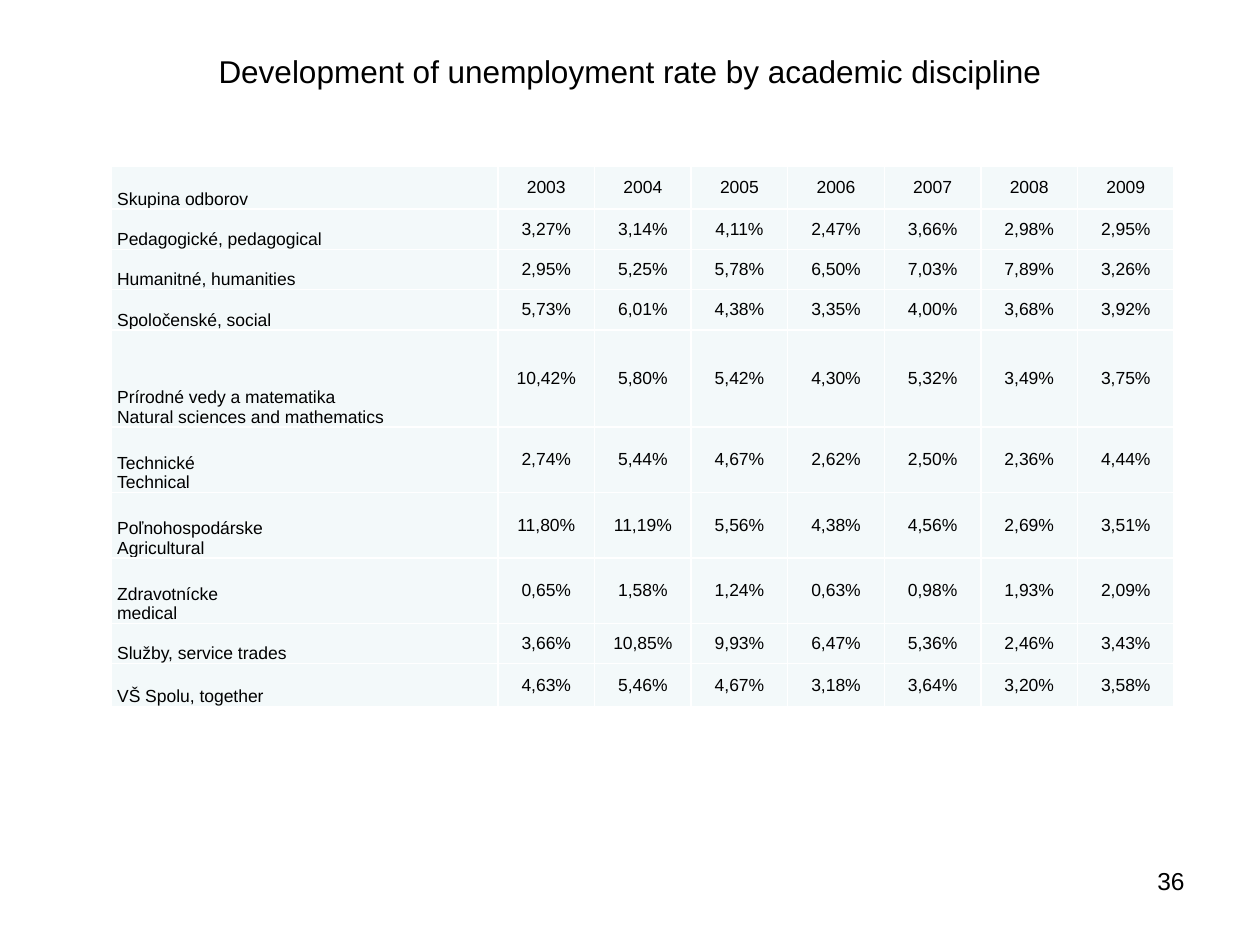
import pptx
import pptx.util
import pptx.dml.color
import pptx.enum.text
import pptx.oxml.ns
import lxml.etree

Inches, Pt = pptx.util.Inches, pptx.util.Pt
RGBColor = pptx.dml.color.RGBColor
ALIGN = pptx.enum.text.PP_ALIGN
ANCHOR = pptx.enum.text.MSO_ANCHOR
qn = pptx.oxml.ns.qn

W, H = 10, 7.5
FONT = "Arial"
BLACK = RGBColor(0x00, 0x00, 0x00)
WHITE = RGBColor(0xFF, 0xFF, 0xFF)
PALE = RGBColor(0xF3, 0xF9, 0xFA)

LABEL_SHARE = 0.364  # first column's share of the table width
ROW_HEIGHTS = [0.34, 0.32, 0.32, 0.32, 0.77, 0.52, 0.52, 0.52, 0.32, 0.34]
ROWS = [
    ("Skupina odborov", "2003 2004 2005 2006 2007 2008 2009"),
    ("Pedagogické, pedagogical", "3,27% 3,14% 4,11% 2,47% 3,66% 2,98% 2,95%"),
    ("Humanitné, humanities", "2,95% 5,25% 5,78% 6,50% 7,03% 7,89% 3,26%"),
    ("Spoločenské, social", "5,73% 6,01% 4,38% 3,35% 4,00% 3,68% 3,92%"),
    ("Prírodné vedy a matematika\nNatural sciences and mathematics",
     "10,42% 5,80% 5,42% 4,30% 5,32% 3,49% 3,75%"),
    ("Technické\nTechnical", "2,74% 5,44% 4,67% 2,62% 2,50% 2,36% 4,44%"),
    ("Poľnohospodárske\nAgricultural", "11,80% 11,19% 5,56% 4,38% 4,56% 2,69% 3,51%"),
    ("Zdravotnícke\nmedical", "0,65% 1,58% 1,24% 0,63% 0,98% 1,93% 2,09%"),
    ("Služby, service trades", "3,66% 10,85% 9,93% 6,47% 5,36% 2,46% 3,43%"),
    ("VŠ Spolu, together", "4,63% 5,46% 4,67% 3,18% 3,64% 3,20% 3,58%"),
]


def write(tf, text, size, align):
    """Fill a text frame with one paragraph per line of text."""
    for i, line in enumerate(text.split("\n")):
        p = tf.add_paragraph() if i else tf.paragraphs[0]
        p.alignment = align
        r = p.add_run()
        r.text = line
        r.font.name, r.font.size = FONT, Pt(size)
        r.font.color.rgb = BLACK


def add_borders(cell):
    """White 1 pt lines on all four sides; they must precede the fill."""
    tcPr = cell._tc.get_or_add_tcPr()
    for i, side in enumerate(("a:lnL", "a:lnR", "a:lnT", "a:lnB")):
        ln = lxml.etree.Element(qn(side), w=str(Pt(1)))
        fill = lxml.etree.SubElement(ln, qn("a:solidFill"))
        lxml.etree.SubElement(fill, qn("a:srgbClr"), val=str(WHITE))
        tcPr.insert(i, ln)


def place_title(s, x, y, w, h):
    sp = s.shapes.title
    sp.left, sp.top, sp.width, sp.height = map(Inches, (x, y, w, h))
    tf = sp.text_frame
    tf.word_wrap = True
    tf.auto_size = pptx.enum.text.MSO_AUTO_SIZE.NONE
    tf.vertical_anchor = ANCHOR.MIDDLE
    tf.margin_bottom = Inches(0.77)  # lifts the line into the upper part
    write(tf, "Development of unemployment rate by academic discipline", 18, ALIGN.CENTER)


def place_table(s, x, y, w, h):
    n_cols = len(ROWS[0][1].split()) + 1
    table = s.shapes.add_table(len(ROWS), n_cols, *map(Inches, (x, y, w, h))).table
    table.first_row = table.horz_banding = False

    # Grid: a wide label column, equal year columns
    label_w = w * LABEL_SHARE
    for c, col in enumerate(table.columns):
        col.width = Inches((w - label_w) / (n_cols - 1) if c else label_w)
    for row, height in zip(table.rows, ROW_HEIGHTS):
        row.height = Inches(height)

    # Cells
    for i, (label, values) in enumerate(ROWS):
        for c, text in enumerate([label] + values.split()):
            cell = table.cell(i, c)
            cell.fill.solid()
            cell.fill.fore_color.rgb = PALE
            cell.margin_left = cell.margin_right = Inches(0.05)
            cell.margin_top = cell.margin_bottom = 0
            cell.vertical_anchor = ANCHOR.MIDDLE if c else ANCHOR.BOTTOM
            write(cell.text_frame, text, 10, ALIGN.CENTER if c else ALIGN.LEFT)
            add_borders(cell)


def place_page_number(s, x, y, w, h):
    tf = s.shapes.add_textbox(*map(Inches, (x, y, w, h))).text_frame
    tf.word_wrap = True
    write(tf, "36", 14, ALIGN.RIGHT)


def main():
    prs = pptx.Presentation()
    prs.slide_width, prs.slide_height = Inches(W), Inches(H)
    s = prs.slides.add_slide(prs.slide_layouts[5])  # title only
    s.background.fill.solid()
    s.background.fill.fore_color.rgb = WHITE
    margin = 0.05 * W
    place_title(s, margin, 0.04 * H, W - 2 * margin, H / 6)
    place_table(s, 0.088 * W, 0.176 * H, 0.844 * W, sum(ROW_HEIGHTS))
    place_page_number(s, 0.717 * W, 0.91 * H, 0.233 * W, 0.07 * H)
    prs.save("out.pptx")


if __name__ == "__main__":
    main()
